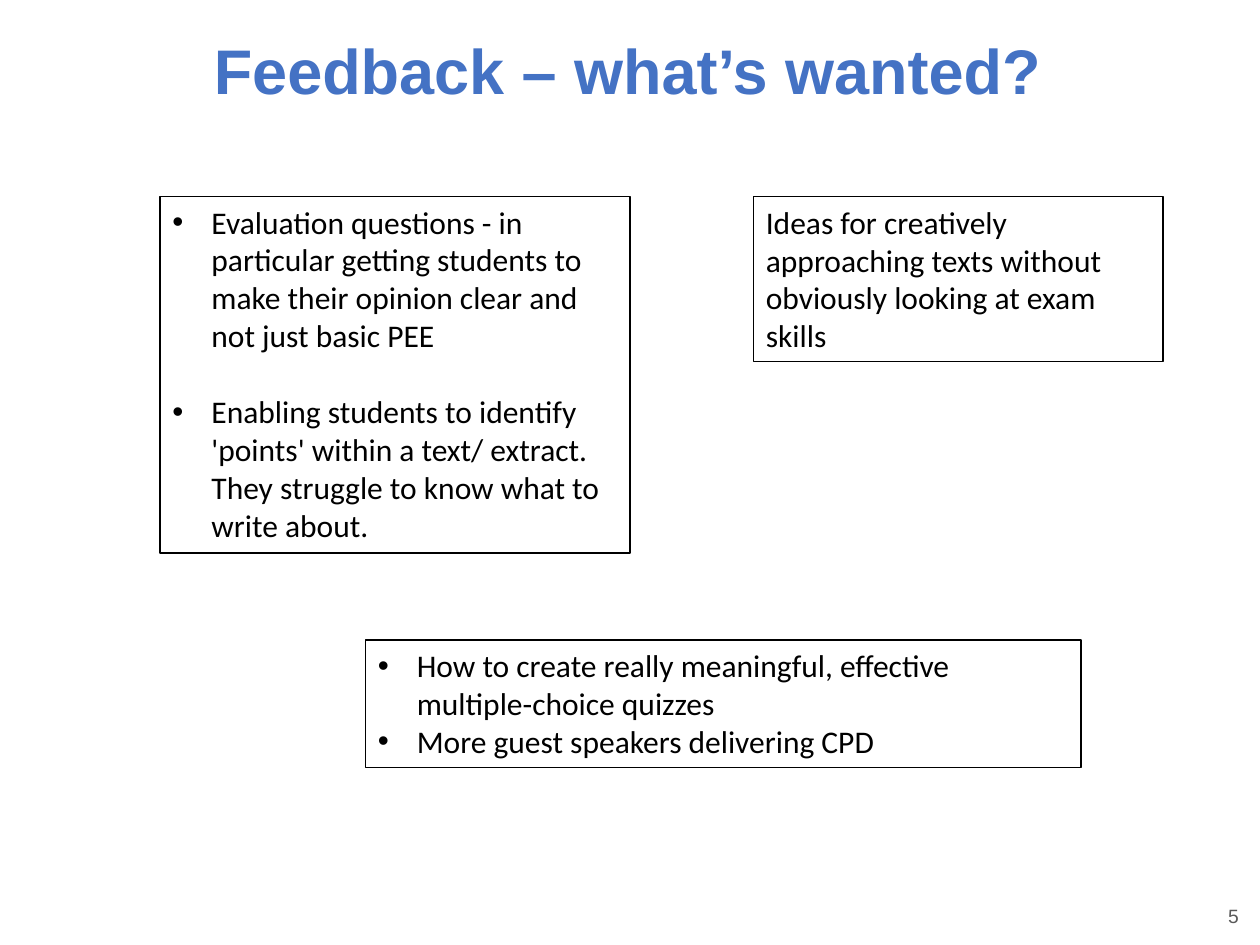
import pptx
import pptx.dml.color
import pptx.enum.shapes
import pptx.enum.text
import pptx.oxml.ns
import pptx.util
from lxml import etree

Inches, Pt = pptx.util.Inches, pptx.util.Pt
Align, Anchor = pptx.enum.text.PP_ALIGN, pptx.enum.text.MSO_ANCHOR
BLUE = pptx.dml.color.RGBColor(0x44, 0x72, 0xC4)
BLACK = pptx.dml.color.RGBColor(0, 0, 0)
GREY = pptx.dml.color.RGBColor(0x59, 0x59, 0x59)

HANGING = Inches(0.31)
BLANK_LINE = Pt(22)

# Each comment box: left, top, width, height; bulleted; gap; comments
COMMENT_BOXES = [
    ((1.27, 1.56, 3.73, 2.83), True, BLANK_LINE, [
        "Evaluation questions - in particular getting students to make "
        "their opinion clear and not just basic PEE",
        "Enabling students to identify 'points' within a text/ extract. "
        "They struggle to know what to write about.",
    ]),
    ((2.9, 5.08, 5.68, 1.01), True, Pt(0), [
        "How to create really meaningful, effective multiple-choice quizzes",
        "More guest speakers delivering CPD",
    ]),
    ((5.98, 1.56, 3.25, 1.31), False, Pt(0), [
        "Ideas for creatively approaching texts without obviously looking "
        "at exam skills",
    ]),
]


def add_span(para, text, font, size, color, bold=False):
    span = para.add_run()
    span.text = text
    span.font.name = font
    span.font.size = Pt(size)
    span.font.color.rgb = color
    span.font.bold = bold


def add_bullet(para):
    properties = para._p.get_or_add_pPr()
    properties.set("marL", str(HANGING))
    properties.set("indent", str(-HANGING))
    for tag, name, value in (("a:buFont", "typeface", "Arial"),
                             ("a:buChar", "char", "•")):
        mark = etree.SubElement(properties, pptx.oxml.ns.qn(tag))
        mark.set(name, value)


def place_title(page, left, top, width, height):
    title = page.shapes.title
    title.left, title.top = Inches(left), Inches(top)
    title.width, title.height = Inches(width), Inches(height)
    frame = title.text_frame
    frame.word_wrap = True
    frame.auto_size = pptx.enum.text.MSO_AUTO_SIZE.NONE
    frame.vertical_anchor = Anchor.TOP
    frame.margin_left = frame.margin_right = frame.margin_bottom = 0
    frame.margin_top = Inches(0.05)
    para = frame.paragraphs[0]
    para.alignment = Align.CENTER
    para.line_spacing = 1.0
    add_span(para, "Feedback – what’s wanted?", "Arial", 36, BLUE, bold=True)


def place_comments(page, bounds, bulleted, gap, comments):
    box = page.shapes.add_shape(pptx.enum.shapes.MSO_SHAPE.RECTANGLE,
                                *map(Inches, bounds))
    box.shadow.inherit = False
    box.fill.background()
    box.line.color.rgb = BLACK
    box.line.width = Pt(0.75)
    frame = box.text_frame
    frame.word_wrap = True
    frame.auto_size = pptx.enum.text.MSO_AUTO_SIZE.SHAPE_TO_FIT_TEXT
    frame.vertical_anchor = Anchor.TOP
    for index, comment in enumerate(comments):
        para = frame.add_paragraph() if index else frame.paragraphs[0]
        if bulleted:
            add_bullet(para)
        para.alignment = Align.LEFT
        if index and gap:
            para.space_before = gap
        add_span(para, comment, "Calibri", 18, BLACK)


def place_page_number(page, left, top, width, height):
    box = page.shapes.add_textbox(*map(Inches, (left, top, width, height)))
    frame = box.text_frame
    frame.word_wrap = True
    frame.vertical_anchor = Anchor.MIDDLE
    para = frame.paragraphs[0]
    para.alignment = Align.RIGHT
    add_span(para, "5", "Arial", 11, GREY)


def main():
    deck = pptx.Presentation()
    deck.slide_width, deck.slide_height = Inches(10), Inches(7.5)
    page = deck.slides.add_slide(deck.slide_layouts.get_by_name("Title Only"))
    place_page_number(page, 9.52, 7.12, 0.41, 0.29)
    place_title(page, 1.39, 0.2, 7.18, 1.21)
    for comment_box in COMMENT_BOXES:
        place_comments(page, *comment_box)
    deck.save("out.pptx")


if __name__ == "__main__":
    main()
